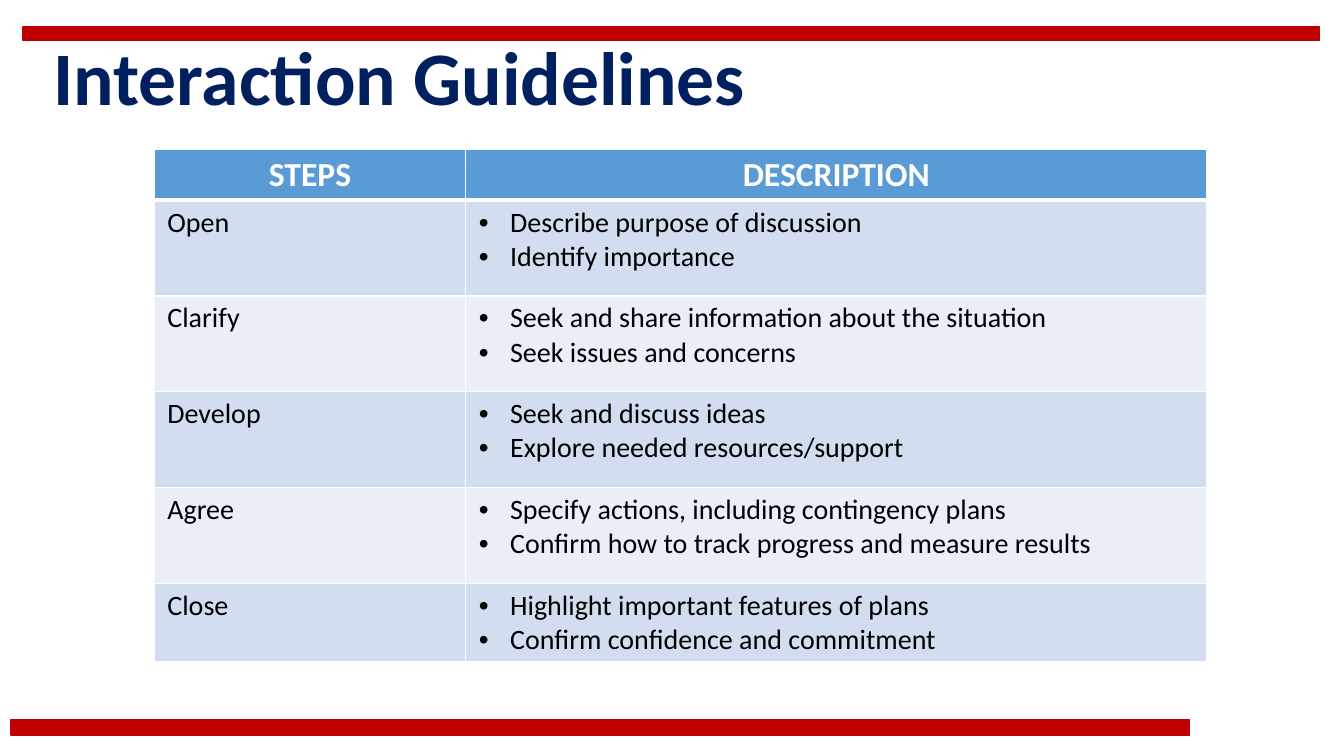
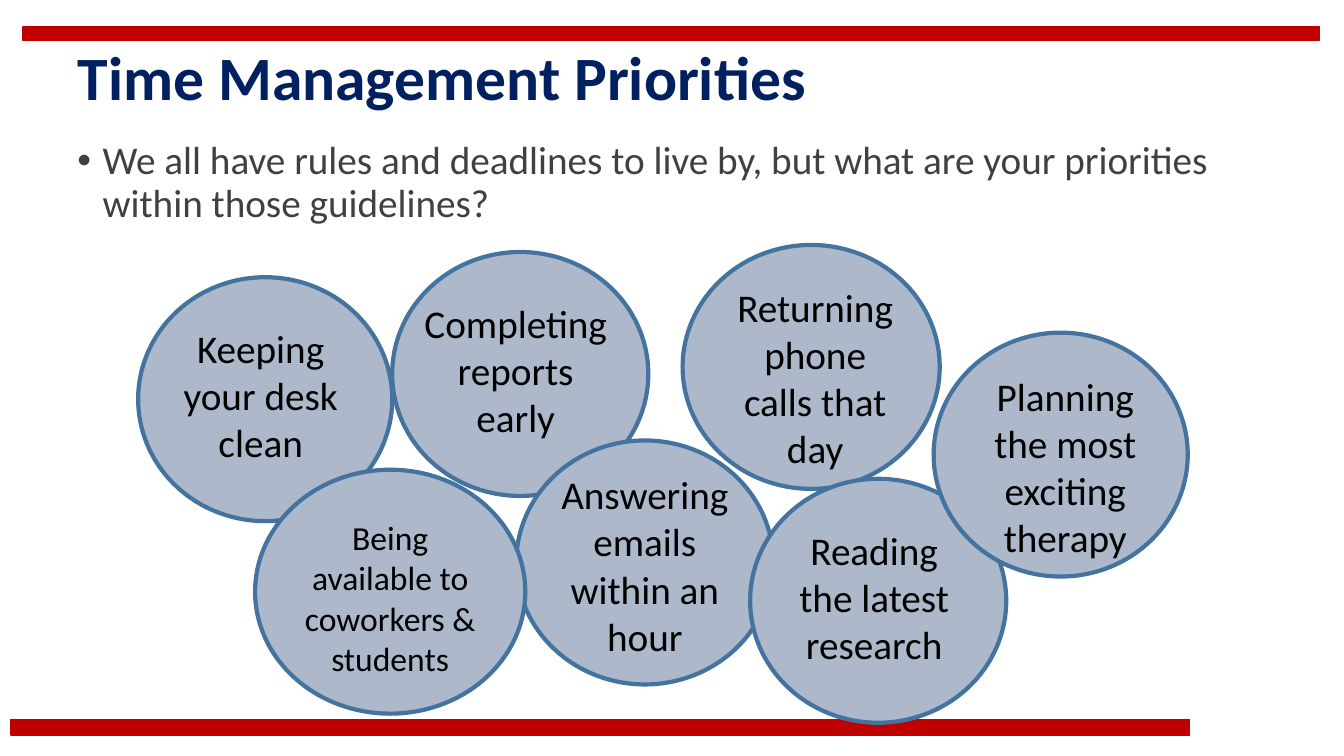
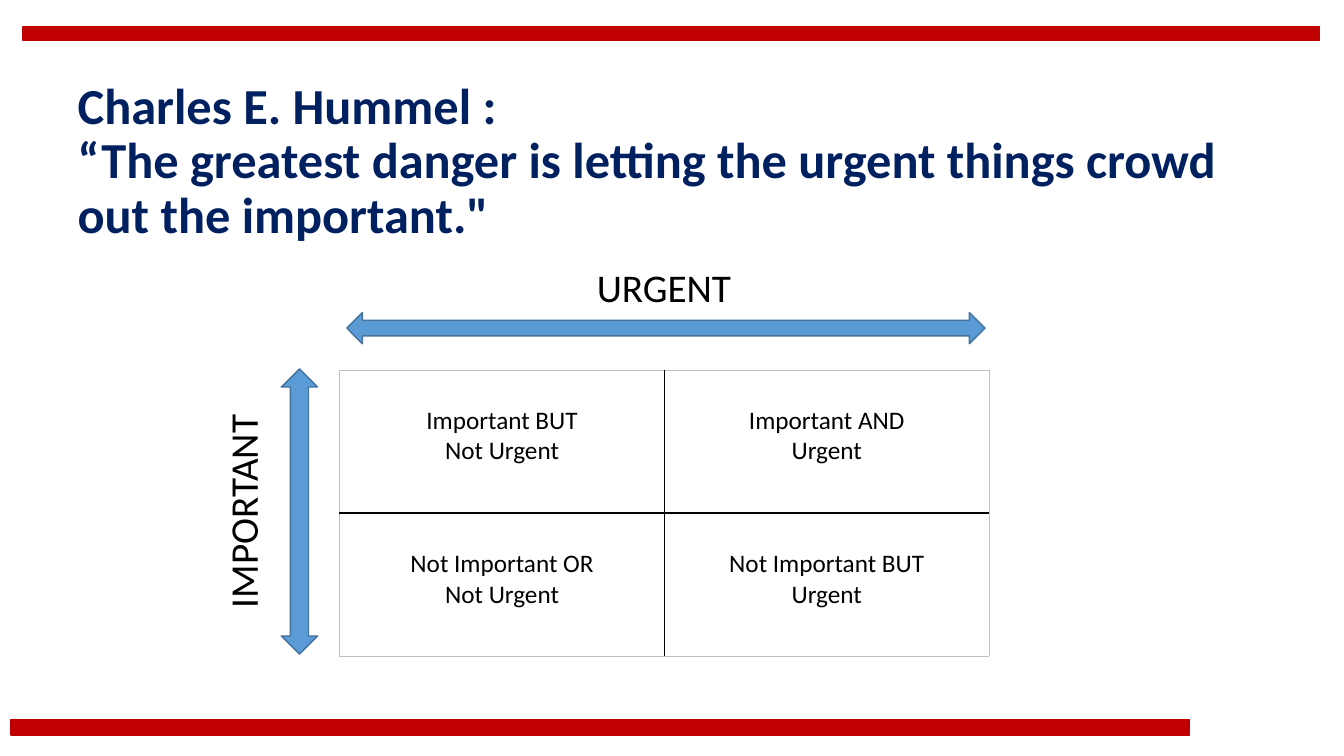
import pptx
import pptx.dml.color
import pptx.enum.shapes
import pptx.enum.text
import pptx.oxml.ns
import pptx.util
from dataclasses import dataclass
from lxml import etree

Inches = pptx.util.Inches
Pt = pptx.util.Pt
SHAPE = pptx.enum.shapes.MSO_SHAPE
ALIGN = pptx.enum.text.PP_ALIGN
ANCHOR = pptx.enum.text.MSO_ANCHOR
qn = pptx.oxml.ns.qn


@dataclass(frozen=True)
class Theme:
    font: str = "Calibri"
    band: str = "C00000"
    title: str = "002060"
    body: str = "404040"
    text: str = "000000"
    white: str = "FFFFFF"
    accent: str = "5B9BD5"
    outline: str = "43739E"
    bubble: str = "ADB9CA"
    stripes: tuple = ("D2DEEF", "EAEFF7")
    frame: str = "BFBFBF"
    large: int = 28
    medium: int = 24
    table: int = 20
    small: int = 18


THEME = Theme()

# Content: boxes are (left, top, width, height) in inches
BANDS = [(0.11, 7.14, 11.69, 0.15), (0.23, 0.27, 12.86, 0.13)]

STEPS_TITLE = "Interaction Guidelines"
STEPS_HEADER = ("STEPS", "DESCRIPTION")
STEPS = [
    ("Open", ["Describe purpose of discussion", "Identify importance"]),
    ("Clarify", ["Seek and share information about the situation",
                 "Seek issues and concerns"]),
    ("Develop", ["Seek and discuss ideas", "Explore needed resources/support"]),
    ("Agree", ["Specify actions, including contingency plans",
               "Confirm how to track progress and measure results"]),
    ("Close", ["Highlight important features of plans",
               "Confirm confidence and commitment"]),
]

PRIORITIES_TITLE = "Time Management Priorities"
PRIORITIES_QUESTION = ("We all have rules and deadlines to live by, but what are "
                       "your priorities within those guidelines?")
BUBBLE_HEIGHT = 2.42
# text, bubble (left, top, width), label (left, top, width), type size
BUBBLES = [
    ("Completing reports early", (3.89, 2.5, 2.54), (4.05, 2.92, 2.13), THEME.large),
    ("Returning phone calls that day", (6.77, 2.43, 2.55), (7.18, 2.76, 1.81), THEME.large),
    ("Answering emails within an hour", (5.12, 4.37, 2.55), (5.45, 4.62, 1.89), THEME.large),
    ("Keeping your desk clean", (1.37, 2.75, 2.52), (1.69, 3.17, 1.79), THEME.large),
    ("Reading the latest research", (7.44, 4.75, 2.54), (7.77, 5.17, 1.8), THEME.large),
    ("Being available to coworkers & students", (2.53, 4.66, 2.68), (2.79, 5.08, 2.16),
     THEME.medium),
    ("Planning the most exciting therapy", (9.26, 3.3, 2.52), (9.67, 3.64, 1.79), THEME.large),
]

QUOTE_TITLE = ("Charles E. Hummel :\n“The greatest danger is letting the urgent "
               "things crowd out the important.\"")
MATRIX = [
    [("Important BUT", "Not Urgent"), ("Important AND", "Urgent")],
    [("Not Important OR", "Not Urgent"), ("Not Important BUT", "Urgent")],
]
# text, label box, rotation, wrap, arrow shape, arrow box
AXES = [
    ("IMPORTANT", (1.23, 4.79, 2.35, 0.57), 270, True,
     SHAPE.UP_DOWN_ARROW, (2.79, 3.66, 0.36, 2.83)),
    ("URGENT", (5.81, 2.56, 1.55, 0.57), 0, False,
     SHAPE.LEFT_RIGHT_ARROW, (3.44, 3.1, 6.33, 0.31)),
]


# Helpers
def inches(box):
    return [Inches(length) for length in box]


def rgb(color):
    return pptx.dml.color.RGBColor.from_string(color)


def add_shape(shapes, kind, box, fill, line, width=1):
    shape = shapes.add_shape(kind, *inches(box))
    shape.shadow.inherit = False
    shape.fill.solid()
    shape.fill.fore_color.rgb = rgb(fill)
    shape.line.color.rgb = rgb(line)
    shape.line.width = Pt(width)
    return shape


def set_bullet(paragraph, indent):
    properties = paragraph._p.get_or_add_pPr()
    properties.set("marL", str(Inches(indent)))
    properties.set("indent", str(-Inches(indent)))
    etree.SubElement(properties, qn("a:buFont"), typeface="Arial")
    etree.SubElement(properties, qn("a:buChar"), char="•")


def write(frame, paragraphs, size, color=THEME.text, bold=False,
          align=ALIGN.LEFT, bullet=None, spacing=None):
    for index, text in enumerate(paragraphs):
        paragraph = frame.add_paragraph() if index else frame.paragraphs[0]
        if bullet:
            set_bullet(paragraph, bullet)
        paragraph.alignment = align
        if spacing:
            paragraph.line_spacing = spacing
        for number, line in enumerate(text.split("\n")):
            if number:
                paragraph.add_line_break()
            run = paragraph.add_run()
            run.text = line
            run.font.name = THEME.font
            run.font.size = Pt(size)
            run.font.bold = bold
            run.font.color.rgb = rgb(color)


def add_text(shapes, box, text, size, wrap=True, **style):
    text_box = shapes.add_textbox(*inches(box))
    text_box.text_frame.word_wrap = wrap
    write(text_box.text_frame, [text], size, **style)
    return text_box


def add_slide(presentation, title, box, size):
    slide = presentation.slides.add_slide(presentation.slide_layouts[5])
    placeholder = slide.shapes.title
    placeholder.left, placeholder.top, placeholder.width, placeholder.height = inches(box)
    frame = placeholder.text_frame
    frame.auto_size = pptx.enum.text.MSO_AUTO_SIZE.NONE
    frame.vertical_anchor = ANCHOR.MIDDLE
    write(frame, [title], size, THEME.title, bold=True, spacing=0.9)
    return slide


def add_bands(presentation, slide):
    """Place the red bands on the layout that all slides share."""
    layout_tree = slide.slide_layout.shapes.element
    for box in BANDS:
        band = add_shape(slide.shapes, SHAPE.RECTANGLE, box, THEME.band, THEME.band)
        layout_tree.append(band.element)


def add_table(slide, left, top, widths, heights):
    table = slide.shapes.add_table(len(heights), len(widths), *inches(
        (left, top, sum(widths), sum(heights)))).table
    table.horz_banding = False
    for column, width in zip(table.columns, widths):
        column.width = Inches(width)
    for row, height in zip(table.rows, heights):
        row.height = Inches(height)
    for cell in table.iter_cells():
        cell.margin_left = cell.margin_right = Inches(0.13)
    return table


def set_borders(cell, left, right, top, bottom):
    """Each side is a (color, width) pair."""
    properties = cell._tc.get_or_add_tcPr()
    sides = zip(("a:lnL", "a:lnR", "a:lnT", "a:lnB"), (left, right, top, bottom))
    for index, (tag, (color, width)) in enumerate(sides):
        line = etree.Element(qn(tag), w=str(Pt(width)))
        fill = etree.SubElement(line, qn("a:solidFill"))
        etree.SubElement(fill, qn("a:srgbClr"), val=color)
        properties.insert(index, line)


# Slides
def build_steps(presentation):
    slide = add_slide(presentation, STEPS_TITLE, (0.43, 0.18, 12, 1.25), 54)
    add_bands(presentation, slide)
    table = add_table(slide, 1.53, 1.48, (3.09, 7.35), [0.49] + [0.95] * 4 + [0.78])
    thin, thick = (THEME.white, 1), (THEME.white, 3)
    for column, heading in enumerate(STEPS_HEADER):
        write(table.cell(0, column).text_frame, [heading], THEME.medium, THEME.white,
              bold=True, align=ALIGN.CENTER)
    for row, (step, actions) in enumerate(STEPS, 1):
        write(table.cell(row, 0).text_frame, [step], THEME.table)
        write(table.cell(row, 1).text_frame, actions, THEME.table, bullet=0.31)
    for row in range(len(STEPS) + 1):
        fill = THEME.stripes[(row - 1) % 2] if row else THEME.accent
        for column in range(len(STEPS_HEADER)):
            cell = table.cell(row, column)
            cell.fill.solid()
            cell.fill.fore_color.rgb = rgb(fill)
            set_borders(cell, thin, thin, thick if row == 1 else thin,
                        thick if row == 0 else thin)


def build_priorities(presentation):
    slide = add_slide(presentation, PRIORITIES_TITLE, (0.67, 0.17, 12, 1.25), 44)
    add_text(slide.shapes, (0.67, 1.35, 12, 1.25), PRIORITIES_QUESTION, THEME.large,
             color=THEME.body, bullet=0.25, spacing=0.9)
    for text, bubble, label, size in BUBBLES:
        group = slide.shapes.add_group_shape()
        add_shape(group.shapes, SHAPE.OVAL, (*bubble, BUBBLE_HEIGHT),
                  THEME.bubble, THEME.outline, 3)
        add_text(group.shapes, (*label, 1.51), text, size, align=ALIGN.CENTER)


def build_matrix(presentation):
    slide = add_slide(presentation, QUOTE_TITLE, (0.67, 0.3, 12, 2.62), 36)
    table = add_table(slide, 3.37, 3.67, [3.22] * 2, [1.42] * 2)
    table.first_row = False
    inner, outer = (THEME.text, 1), (THEME.frame, 0.5)
    for row, quadrants in enumerate(MATRIX):
        for column, lines in enumerate(quadrants):
            cell = table.cell(row, column)
            cell.fill.background()
            cell.margin_top = Inches(0.35)
            write(cell.text_frame, lines, THEME.small, align=ALIGN.CENTER)
            set_borders(cell, inner if column else outer, outer if column else inner,
                        inner if row else outer, outer if row else inner)
    for text, label_box, rotation, wrap, arrow, arrow_box in AXES:
        group = slide.shapes.add_group_shape()
        label = add_text(group.shapes, label_box, text, THEME.large, wrap,
                         align=ALIGN.CENTER)
        label.rotation = rotation
        add_shape(group.shapes, arrow, arrow_box, THEME.accent, THEME.outline)


def main():
    presentation = pptx.Presentation()
    presentation.slide_width = Inches(13.33)
    presentation.slide_height = Inches(7.5)
    build_steps(presentation)
    build_priorities(presentation)
    build_matrix(presentation)
    presentation.save("out.pptx")


if __name__ == "__main__":
    main()
